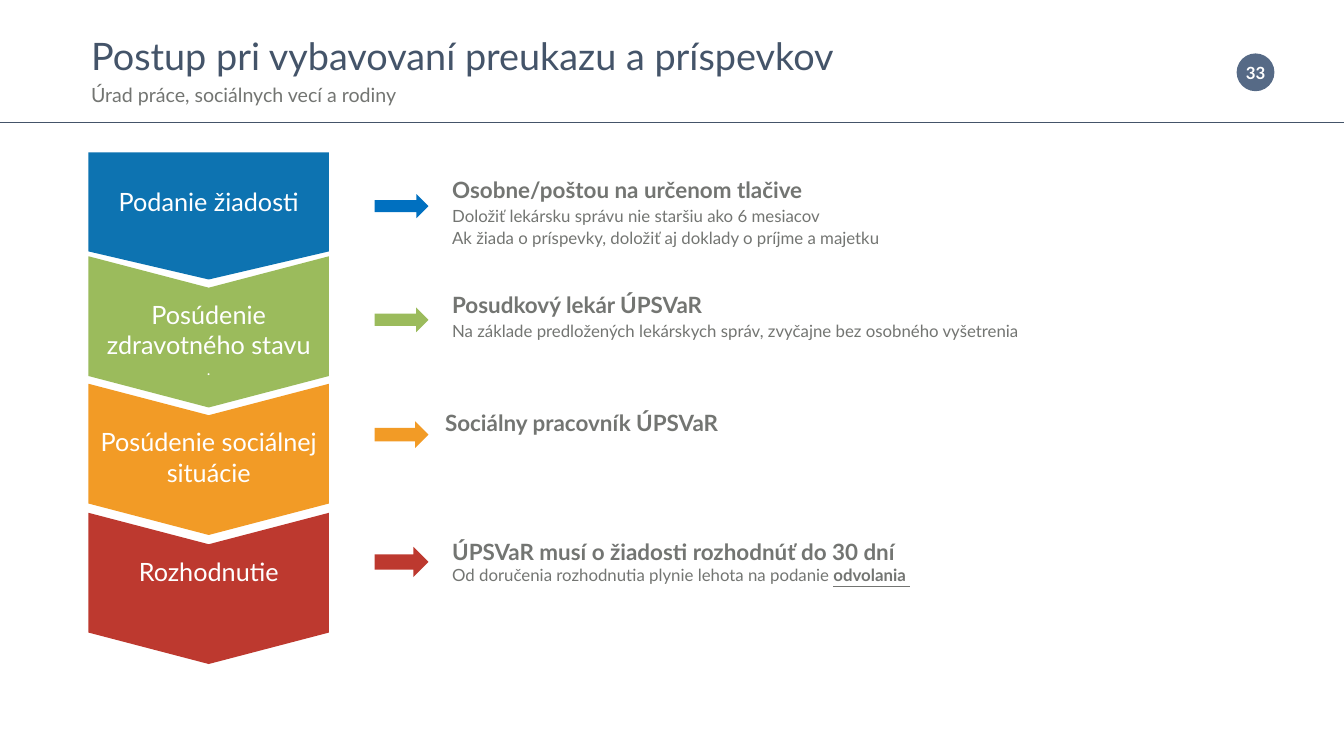
from lxml.etree import SubElement
from pptx import Presentation
from pptx.dml.color import RGBColor
from pptx.enum.shapes import MSO_CONNECTOR, MSO_SHAPE
from pptx.enum.text import MSO_ANCHOR, PP_ALIGN
from pptx.oxml.ns import qn
from pptx.util import Pt

PX = 9144  # EMU per px, 100 px to the inch
COLORS = {
    "navy": "445469", "badge": "566A86", "gray": "737572", "white": "FFFFFF",
    "blue": "0D73B1", "bright": "0070C0", "green": "9BBB5C",
    "orange": "F29B26", "red": "BD392F",
}
FONT = "Lato"
BAND_X, BAND_W = 176, 477
ARROW_X, ARROW_W = 743, 107


def rgb(name):
    return RGBColor.from_string(COLORS[name])


def add_run(p, text, size=24, color="gray", bold=False, underline=False):
    r = p.add_run()
    r.text = text
    r.font.name, r.font.size = FONT, Pt(size)
    r.font.color.rgb = rgb(color)
    r.font.bold, r.font.underline = bold, underline


def head(text):
    return [(text, dict(size=32, bold=True))]


def body(text):
    return [(text, {})]


def label(text, size=36):
    return [(text, dict(size=size, color="white"))]


class SlideBuilder:
    def __init__(self, slide):
        self.slide = slide

    def fill_text(self, tf, paragraphs, align=PP_ALIGN.LEFT, spacing=None,
                  insets=(10, 5, 10, 5), anchor=MSO_ANCHOR.TOP, wrap=True):
        """Fill a frame with paragraphs, each a list of (text, run format)."""
        tf.word_wrap, tf.vertical_anchor = wrap, anchor
        tf.margin_left, tf.margin_top, tf.margin_right, tf.margin_bottom = (
            v * PX for v in insets)
        for i, runs in enumerate(paragraphs):
            p = tf.add_paragraph() if i else tf.paragraphs[0]
            p.alignment = align
            if spacing:
                p.line_spacing = spacing
            for text, fmt in runs:
                add_run(p, text, **fmt)

    def text(self, x, y, w, h, paragraphs, **fmt):
        sp = self.slide.shapes.add_textbox(x * PX, y * PX, w * PX, h * PX)
        self.fill_text(sp.text_frame, paragraphs, **fmt)

    def shape(self, kind, x, y, w, h, color):
        sp = self.slide.shapes.add_shape(kind, x * PX, y * PX, w * PX, h * PX)
        sp.shadow.inherit = False
        sp.fill.solid()
        sp.fill.fore_color.rgb = rgb(color)
        sp.line.fill.background()
        return sp

    def rule(self, x1, y1, x2, y2, color):
        line = self.slide.shapes.add_connector(
            MSO_CONNECTOR.STRAIGHT, x1 * PX, y1 * PX, x2 * PX, y2 * PX)
        line.line.color.rgb = rgb(color)
        line.line.width = Pt(1)
        SubElement(line.element.spPr, qn("a:effectLst"))

    def band(self, kind, y, h, color, adj, paragraphs, **fmt):
        """Add a downward band: a sideways shape turned by 90 degrees, text upright."""
        shift = (BAND_W - h) // 2
        sp = self.shape(kind, BAND_X + shift, y - shift, h, BAND_W, color)
        sp.rotation = 90
        sp.adjustments[0] = adj
        self.fill_text(sp.text_frame, paragraphs, align=PP_ALIGN.CENTER, **fmt)
        sp.element.txBody.bodyPr.set("vert", "vert270")


def main():
    prs = Presentation()
    prs.slide_width, prs.slide_height = 2666 * PX, 1500 * PX
    s = SlideBuilder(prs.slides.add_slide(prs.slide_layouts[6]))

    s.shape(MSO_SHAPE.OVAL, 2453, 106, 75, 75, "badge")
    s.text(2450, 114, 81, 61, [[("33", dict(color="white", bold=True))]],
           align=PP_ALIGN.CENTER, insets=(20, 10, 20, 10), wrap=False)
    s.rule(0, 242, 2666, 242, "navy")
    s.text(171, 43, 1560, 176, [
        [("Postup pri vybavovaní preukazu a príspevkov", dict(size=54, color="navy"))],
        [("Úrad práce, sociálnych vecí a rodiny", dict(size=28))],
    ], spacing=1.2)

    s.band(MSO_SHAPE.PENTAGON, 302, 252, "blue", 0.221, [label("Podanie žiadosti")],
           insets=(20, 20, 50, 20), anchor=MSO_ANCHOR.MIDDLE)
    chevrons = [
        (508, "green", [label("Posúdenie zdravotného stavu"), label(".", 22)]),
        (761, "orange", [label("Posúdenie sociálnej situácie")]),
        (1017, "red", [label("Rozhodnutie")]),
    ]
    for y, color, paragraphs in chevrons:
        s.band(MSO_SHAPE.CHEVRON, y, 300, color, 0.208, paragraphs,
               insets=(23, 20, 50, 20))

    arrows = [(385, 48, "bright"), (610, 49, "green"), (836, 53, "orange"), (1085, 60, "red")]
    for y, h, color in arrows:
        s.shape(MSO_SHAPE.RIGHT_ARROW, ARROW_X, y, ARROW_W, h, color)

    s.text(887, 340, 1512, 158, [
        head("Osobne/poštou na určenom tlačive"),
        body("Doložiť lekársku správu nie staršiu ako 6 mesiacov"),
        body("Ak žiada o príspevky, doložiť aj doklady o príjme a majetku"),
    ], spacing=1.1)
    s.text(887, 568, 1512, 158, [
        head("Posudkový lekár ÚPSVaR"),
        body("Na základe predložených lekárskych správ, zvyčajne bez osobného vyšetrenia"),
    ], spacing=1.1)
    s.text(873, 802, 1732, 129, [head("Sociálny pracovník ÚPSVaR")], spacing=1.1)
    s.text(887, 1063, 1739, 104, [
        head("ÚPSVaR musí o žiadosti rozhodnúť do 30 dní"),
        body("Od doručenia rozhodnutia plynie lehota na podanie ")
        + [("odvolania ", dict(bold=True, underline=True))],
    ], align=PP_ALIGN.JUSTIFY)

    prs.save("out.pptx")


if __name__ == "__main__":
    main()
